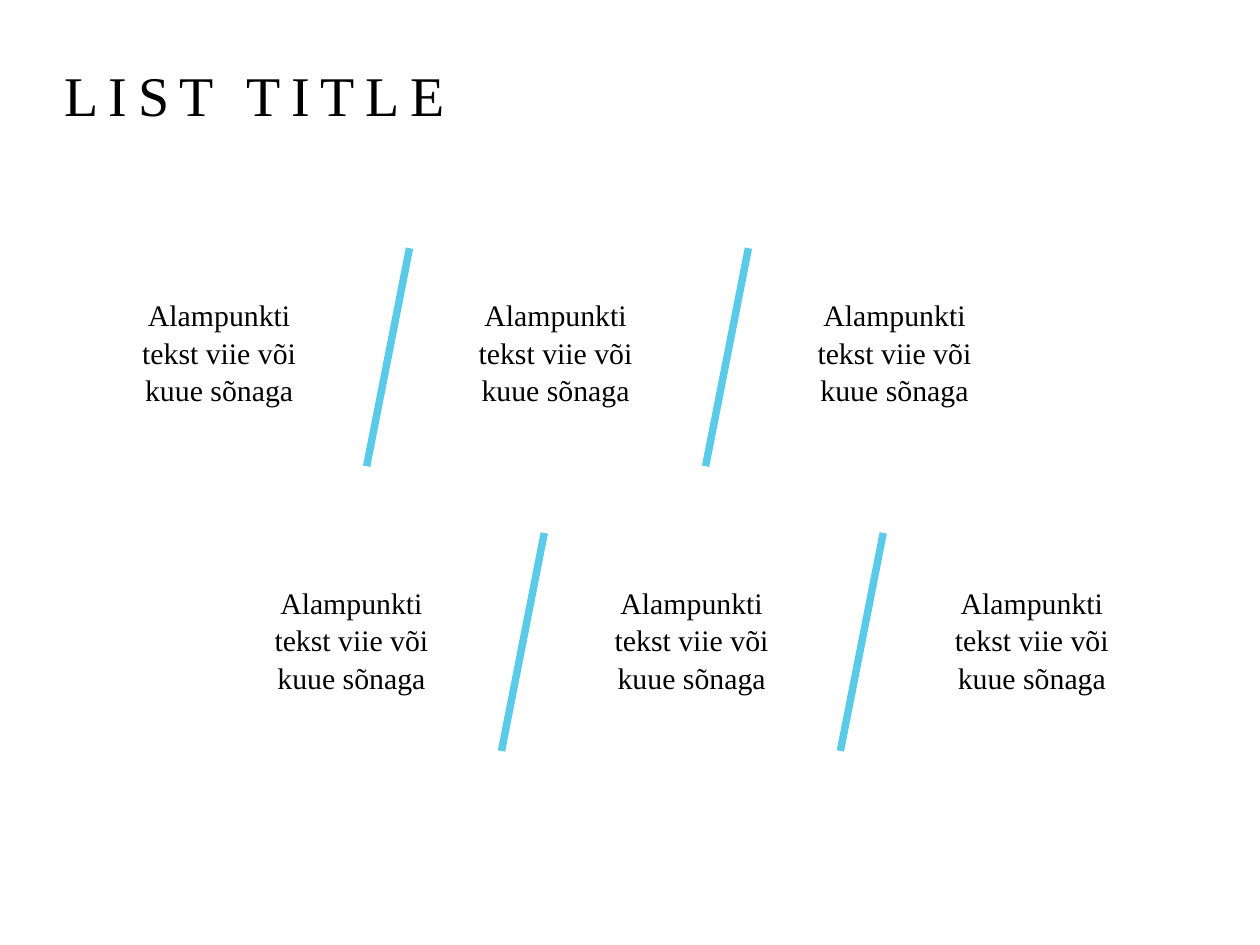
from lxml.etree import SubElement
from pptx import Presentation
from pptx.dml.color import RGBColor
from pptx.enum.shapes import MSO_CONNECTOR
from pptx.enum.text import MSO_ANCHOR, MSO_AUTO_SIZE, PP_ALIGN
from pptx.oxml.ns import qn
from pptx.util import Inches, Pt

FONT = "Times New Roman"
BLACK = "000000"
BLUE = "59CBE8"
LINES = ["Alampunkti", "tekst viie või", "kuue sõnaga"]
STEP = 2.69  # distance between neighbouring slashes

# text top, text lefts, slash top, first slash left
ROWS = [
    (2.31, [0.92, 3.59, 6.28], 1.97, 2.91),
    (4.59, [1.97, 4.67, 7.37], 4.23, 3.98),
]


def paint(color, value):
    color.rgb = RGBColor.from_string(value)


def add_run(para, text, size):
    run = para.add_run()
    run.text = text
    run.font.name = FONT
    run.font.size = Pt(size)
    paint(run.font.color, BLACK)
    return run


def add_title(slide, text):
    title = slide.shapes.title
    title.left, title.top = Inches(0.41), Inches(-0.18)
    title.width, title.height = Inches(9.15), Inches(1.24)
    frame = title.text_frame
    frame.auto_size = MSO_AUTO_SIZE.NONE
    frame.vertical_anchor = MSO_ANCHOR.BOTTOM
    para = frame.paragraphs[0]
    para.alignment = PP_ALIGN.LEFT
    run = add_run(para, text, 32)
    run.font._element.set("spc", "600")  # letter spacing of 6 pt


def add_slash(slide, left, top):
    line = slide.shapes.add_connector(
        MSO_CONNECTOR.STRAIGHT,
        Inches(left + 0.34), Inches(top), Inches(left), Inches(top + 1.73))
    paint(line.line.color, BLUE)
    line.line.width = Pt(4.25)
    SubElement(line._element.spPr, qn("a:effectLst"))


def add_item(slide, left, top):
    box = slide.shapes.add_textbox(
        Inches(left), Inches(top), Inches(1.64), Inches(0.96))
    frame = box.text_frame
    frame.word_wrap = True
    frame.auto_size = MSO_AUTO_SIZE.SHAPE_TO_FIT_TEXT
    frame.vertical_anchor = MSO_ANCHOR.MIDDLE
    for i, text in enumerate(LINES):
        para = frame.add_paragraph() if i else frame.paragraphs[0]
        para.alignment = PP_ALIGN.CENTER
        para.line_spacing = 1.05
        add_run(para, text, 17)


def main():
    deck = Presentation()
    deck.slide_width, deck.slide_height = Inches(10), Inches(7.5)
    slide = deck.slides.add_slide(deck.slide_layouts[5])
    add_title(slide, "LIST TITLE")
    for top, lefts, slash_top, slash_left in ROWS:
        for i in range(len(lefts) - 1):
            add_slash(slide, slash_left + i * STEP, slash_top)
        for left in lefts:
            add_item(slide, left, top)
    deck.save("out.pptx")


if __name__ == "__main__":
    main()
